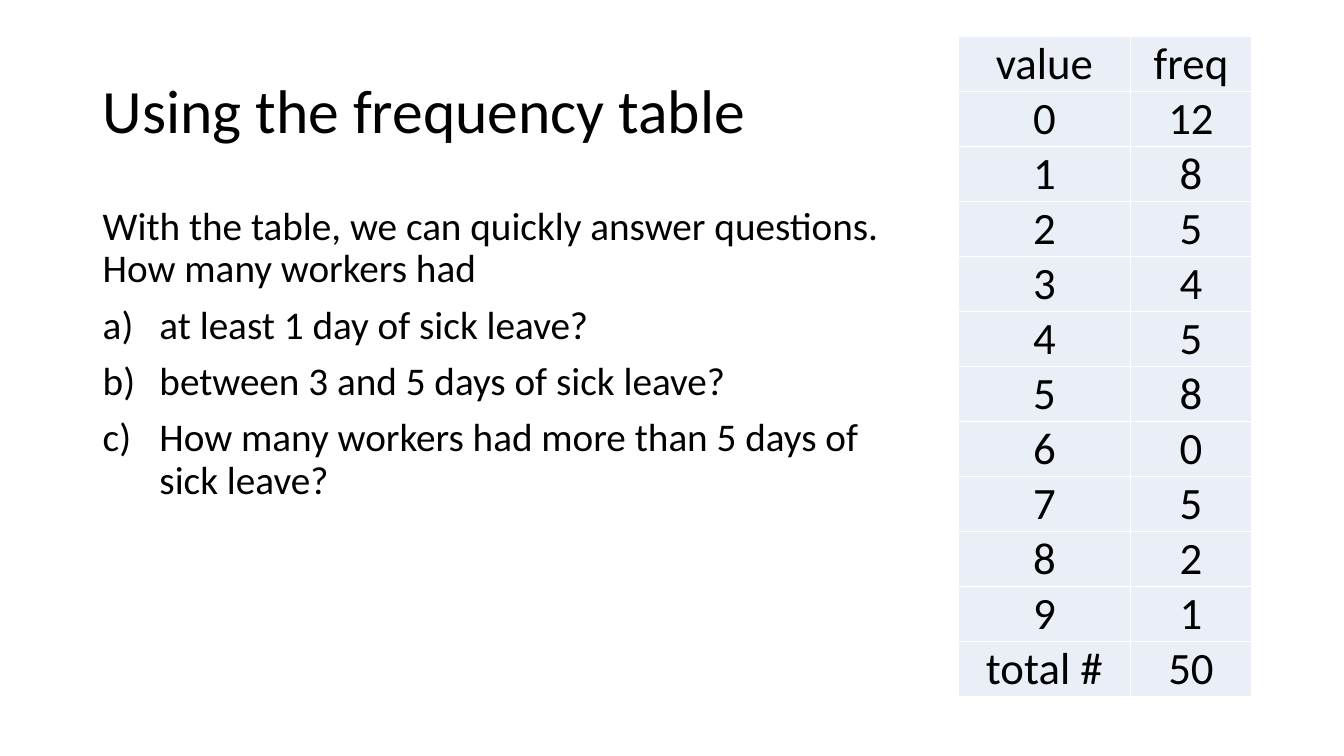
from lxml import etree
from pptx import Presentation
from pptx import util as u
from pptx.dml.color import RGBColor
from pptx.enum import text
from pptx.oxml import parse_xml
from pptx.oxml.ns import nsdecls, qn

COLORS = {"ink": "000000", "cell": "EAEFF7", "border": "FFFFFF"}


class FrequencySlide:
    """Holds the style and the current slide."""

    font_name = "Calibri"
    indent = u.Cm(1.43)
    cell_inset = u.Cm(0.03)

    def __init__(self, slide):
        self.slide = slide

    def style(self, paragraph, size):
        for run in paragraph.runs:
            run.font.name = self.font_name
            run.font.size = u.Pt(size)
            run.font.color.rgb = RGBColor.from_string(COLORS["ink"])

    def text_box(self, box, size, paragraphs, anchor, space_before=0):
        frame = self.slide.shapes.add_textbox(*map(u.Cm, box)).text_frame
        frame.word_wrap = True
        frame.vertical_anchor = anchor
        frame.text = "\n".join(paragraphs)
        for index, paragraph in enumerate(frame.paragraphs):
            paragraph.line_spacing = 0.9
            if index:
                paragraph.space_before = u.Pt(space_before)
            self.style(paragraph, size)
        return frame

    def letter(self, paragraph):
        properties = paragraph._p.get_or_add_pPr()
        properties.set("marL", str(self.indent))
        properties.set("indent", str(-self.indent))
        numbering = etree.SubElement(properties, qn("a:buAutoNum"))
        numbering.set("type", "alphaLcParenR")

    def cell(self, cell, content, size):
        cell.text = content
        cell.vertical_anchor = text.MSO_ANCHOR.BOTTOM
        cell.margin_left = cell.margin_right = cell.margin_top = self.cell_inset
        cell.margin_bottom = 0
        paragraph = cell.text_frame.paragraphs[0]
        paragraph.alignment = text.PP_ALIGN.CENTER
        self.style(paragraph, size)
        properties = cell._tc.get_or_add_tcPr()
        for side in ("lnL", "lnR", "lnT", "lnB"):
            properties.append(parse_xml(
                f'<a:{side} {nsdecls("a")} w="{u.Pt(1)}"><a:solidFill>'
                f'<a:srgbClr val="{COLORS["border"]}"/></a:solidFill></a:{side}>'))
        cell.fill.solid()
        cell.fill.fore_color.rgb = RGBColor.from_string(COLORS["cell"])

    def table(self, box, widths, rows, size):
        table = self.slide.shapes.add_table(
            len(rows), len(widths), *map(u.Cm, box)).table
        table.first_row = table.horz_banding = False
        for column, width in zip(table.columns, widths):
            column.width = u.Cm(width)
        for row, contents in zip(table.rows, rows):
            for cell, content in zip(row.cells, contents):
                self.cell(cell, str(content), size)


def main():
    deck = Presentation()
    deck.slide_width, deck.slide_height = u.Cm(33.87), u.Cm(19.05)
    page = FrequencySlide(deck.slides.add_slide(deck.slide_layouts[6]))

    # Title
    page.text_box((2.34, 1.02, 29.21, 3.68), 44, ["Using the frequency table"],
                  text.MSO_ANCHOR.MIDDLE)

    # Questions
    questions = page.text_box((2.34, 5.08, 20.4, 12.09), 28, [
        "With the table, we can quickly answer questions. How many workers had",
        "at least 1 day of sick leave?",
        "between 3 and 5 days of sick leave?",
        "How many workers had more than 5 days of sick leave?",
    ], text.MSO_ANCHOR.TOP, space_before=10)
    for question in questions.paragraphs[1:]:
        page.letter(question)

    # Frequency table
    frequencies = [12, 8, 5, 4, 5, 8, 0, 5, 2, 1]
    rows = [("value", "freq"), *enumerate(frequencies),
            ("total #", sum(frequencies))]
    page.table((24.16, 0.91, 7.39, 16.59), (4.32, 3.07), rows, 32)

    deck.save("out.pptx")


if __name__ == "__main__":
    main()
